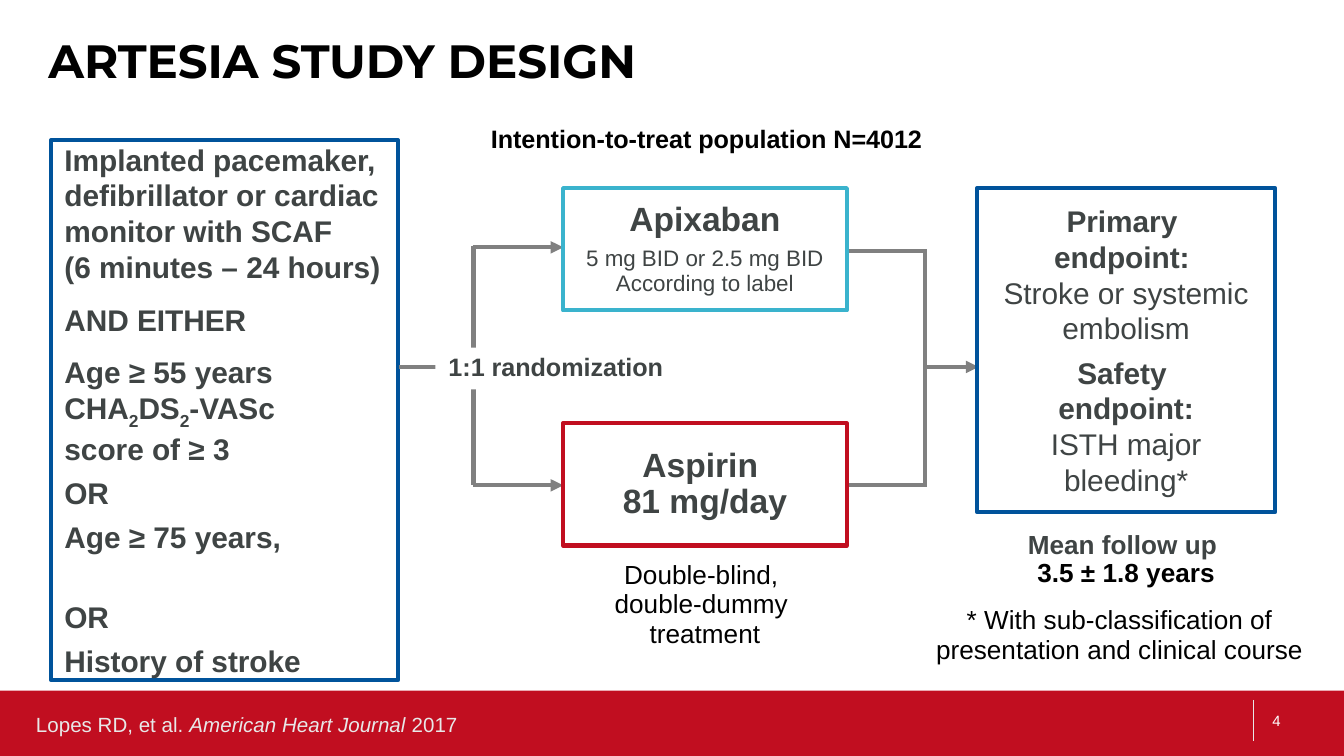
from copy import deepcopy

from lxml.etree import SubElement
from pptx import Presentation
from pptx.dml.color import RGBColor
from pptx.enum.shapes import MSO_CONNECTOR, MSO_SHAPE
from pptx.enum.text import MSO_ANCHOR, MSO_AUTO_SIZE, PP_ALIGN
from pptx.oxml.ns import qn
from pptx.util import Pt

BLACK = RGBColor(0x00, 0x00, 0x00)
WHITE = RGBColor(0xFF, 0xFF, 0xFF)
SLATE = RGBColor(0x3F, 0x44, 0x44)
GRAY = RGBColor(0x80, 0x80, 0x80)
PALE = RGBColor(0xE8, 0xE8, 0xE8)
RED = RGBColor(0xC1, 0x0E, 0x20)
BLUE = RGBColor(0x00, 0x53, 0x9B)
CYAN = RGBColor(0x3A, 0xB3, 0xCD)
CENTER, LEFT = PP_ALIGN.CENTER, PP_ALIGN.LEFT
TOP, MIDDLE, BOTTOM = MSO_ANCHOR.TOP, MSO_ANCHOR.MIDDLE, MSO_ANCHOR.BOTTOM


def add_run(p, text, size, color=SLATE, bold=False, italic=False, base=0):
    """Add text to a paragraph, turning newlines into line breaks."""
    for i, line in enumerate(text.split("\n")):
        if i:
            p.add_line_break()
            p._p[-1].append(deepcopy(r._r.rPr))
        r = p.add_run()
        r.text = line
        f = r.font
        f.name, f.size, f.bold, f.italic = "Arial", Pt(size), bold, italic
        f.color.rgb = color
        if base:
            r._r.rPr.set("baseline", str(base * 1000))


def add_para(sp, runs, align=CENTER, before=0, after=0, spacing=1.0):
    """Append a paragraph of (text, size, style...) runs to a shape."""
    tf = sp.text_frame
    p = tf.paragraphs[0] if not tf.text else tf.add_paragraph()
    p.alignment, p.line_spacing = align, spacing
    p.space_before, p.space_after = Pt(before), Pt(after)
    for run in runs:
        add_run(p, *run)


def set_frame(sp, anchor, dx, dy):
    """Set wrapping, anchor and insets of a text frame."""
    tf = sp.text_frame
    tf.word_wrap, tf.vertical_anchor = True, anchor
    tf.auto_size = MSO_AUTO_SIZE.NONE
    tf.margin_left = tf.margin_right = Pt(dx)
    tf.margin_top = tf.margin_bottom = Pt(dy)


def add_box(s, x, y, w, h, fill=None, line=None, anchor=MIDDLE, dy=7.2):
    """Add a rectangle with optional fill and outline."""
    sp = s.shapes.add_shape(MSO_SHAPE.RECTANGLE, Pt(x), Pt(y), Pt(w), Pt(h))
    sp.shadow.inherit = False
    if fill is None:
        sp.fill.background()
    else:
        sp.fill.solid()
        sp.fill.fore_color.rgb = fill
    if line is None:
        sp.line.fill.background()
    else:
        sp.line.color.rgb, sp.line.width = line, Pt(2.25)
    set_frame(sp, anchor, 7.2, dy)
    return sp


def add_label(s, x, y, w, h, runs, align=CENTER, spacing=0.9, anchor=TOP):
    """Add a one-paragraph text box."""
    sp = s.shapes.add_textbox(Pt(x), Pt(y), Pt(w), Pt(h))
    set_frame(sp, anchor, 7.2, 3.6)
    add_para(sp, runs, align, spacing=spacing)


def add_line(s, x1, y1, x2, y2, arrow=False, color=GRAY, width=2.25):
    """Add a straight connector, with an arrowhead if asked."""
    c = s.shapes.add_connector(MSO_CONNECTOR.STRAIGHT, Pt(x1), Pt(y1), Pt(x2), Pt(y2))
    c.line.color.rgb, c.line.width = color, Pt(width)
    if arrow:
        SubElement(c.line._get_or_add_ln(), qn("a:tailEnd"), type="triangle")
    SubElement(c._element.spPr, qn("a:effectLst"))


def add_title(s, x, y, w, h):
    """Place and format the title."""
    sp = s.shapes.title
    sp.left, sp.top, sp.width, sp.height = Pt(x), Pt(y), Pt(w), Pt(h)
    set_frame(sp, TOP, 7.2, 3.6)
    sp.text_frame.text = "ARTESIA STUDY DESIGN"
    p = sp.text_frame.paragraphs[0]
    p.alignment = LEFT
    f = p.runs[0].font
    f.name, f.size, f.bold, f.color.rgb = "Montserrat", Pt(25), True, BLACK


def add_footer(s, x, y, w, h):
    """Draw the footer band with citation and page number."""
    add_box(s, x, y, w, h, fill=RED)
    add_line(s, x + w - 48.7, y + 5, x + w - 48.7, y + 27, color=PALE, width=0.5)
    add_label(s, x + 12.2, y + 8, 245, 21,
              [("Lopes RD, et al. ", 11, PALE),
               ("American Heart Journal ", 11, PALE, False, True),
               ("2017", 11, PALE)], LEFT, 1.0)
    add_label(s, x + w - 45.4, y + 5, 45, 22, [("4", 8, WHITE)], LEFT, 1.0, MIDDLE)


def add_criteria(s, x, y, w, h):
    """List the inclusion criteria."""
    sp = add_box(s, x, y, w, h, line=BLUE, dy=0)
    score = [("Age ≥ 55 years\nCHA", 0), ("2", -25), ("DS", 0), ("2", -25),
             ("-VASc \nscore of ≥ 3", 0)]
    criteria = [
        ([("Implanted pacemaker, defibrillator or cardiac monitor with SCAF "
           "\n(6 minutes – 24 hours)", 0)], 0, 4.5),
        ([("AND EITHER", 0)], 4.5, 4.5),
        (score, 4.5, 0),
        ([("OR", 0)], 4.5, 0),
        ([("Age ≥ 75 years,", 0)], 4.5, 0),
        ([("OR", 0)], 23.5, 0),
        ([("History of stroke", 0)], 4.5, 0),
    ]
    for parts, before, after in criteria:
        runs = [(text, 16, SLATE, True, False, base) for text, base in parts]
        add_para(sp, runs, LEFT, before, after)


def add_arms(s, x, y, w, h):
    """Draw the two treatment arms and the text around them."""
    arm_h = 65.5
    apixaban = add_box(s, x, y, w, arm_h, line=CYAN)
    add_para(apixaban, [("Apixaban", 18, SLATE, True)], after=4.5, spacing=0.9)
    add_para(apixaban, [("5 mg BID or 2.5 mg BID According to label", 12)], spacing=0.9)
    aspirin = add_box(s, x, y + h - arm_h, w, arm_h, line=RED)
    add_para(aspirin, [("Aspirin \n81 mg/day", 18, SLATE, True)], spacing=0.9)
    add_label(s, x - 69, y - 37.5, 291.6, 24,
              [("Intention-to-treat population N=4012", 13.5, BLACK, True)], anchor=MIDDLE)
    add_label(s, x, y + h + 4.3, w, 55,
              [("Double-blind, \ndouble-dummy \ntreatment", 14, BLACK)], spacing=0.95)


def add_flow(s, x, y, w, h):
    """Connect criteria, arms and endpoints around the randomization label."""
    fork, join, mid, bottom = x + 40, x + 282, y + 64.1, y + h
    add_line(s, x, mid, x + 48, mid)
    add_line(s, fork, y - 0.5, fork, bottom)
    for level in (y, bottom):
        add_line(s, fork - 0.5, level, x + 88, level, arrow=True)
    for level in (y + 2, bottom):
        add_line(s, x + 241, level, join, level)
    add_line(s, join, y + 1, join, bottom + 0.7)
    add_line(s, join, mid, x + w, mid, arrow=True)
    sp = add_box(s, x + 19.5, mid - 10.3, 139.7, 22.3, fill=WHITE, anchor=TOP, dy=3.6)
    add_para(sp, [("1:1 randomization", 13.5, SLATE, True)], LEFT, spacing=0.9)


def add_endpoints(s, x, y, w, h):
    """Draw the endpoint box, the follow-up time and the footnote."""
    sp = add_box(s, x, y, w, h, line=BLUE)
    add_para(sp, [("Primary \nendpoint: \n", 16, SLATE, True),
                  ("Stroke or systemic embolism", 16)], after=4.5)
    add_para(sp, [("Safety \nendpoint:\n", 16, SLATE, True), ("ISTH major bleeding*", 16)])
    add_label(s, x, y + h + 7.2, w, 38,
              [("Mean follow up \n", 14, SLATE, True), ("3.5 ± 1.8 years", 14, BLACK, True)])
    note = add_box(s, x - 31.6, y + h + 52.6, 216, 33, fill=WHITE, anchor=BOTTOM, dy=3.6)
    add_para(note, [("* With sub-classification of presentation and clinical course", 14, BLACK)],
             spacing=0.95)


def main():
    """Build and save the slide."""
    prs = Presentation()
    prs.slide_width, prs.slide_height = Pt(720), Pt(405)
    s = prs.slides.add_slide(prs.slide_layouts[5])
    add_footer(s, 0, 370, 720, 35)
    add_title(s, 18.7, 13.7, 541, 77)
    add_criteria(s, 27.4, 75, 185.8, 289.4)
    add_flow(s, 213.7, 132.5, 310.5, 127.5)
    add_arms(s, 301.7, 100.8, 152, 191.5)
    add_endpoints(s, 523.4, 100.8, 159.8, 173.5)
    prs.save("out.pptx")


if __name__ == "__main__":
    main()
